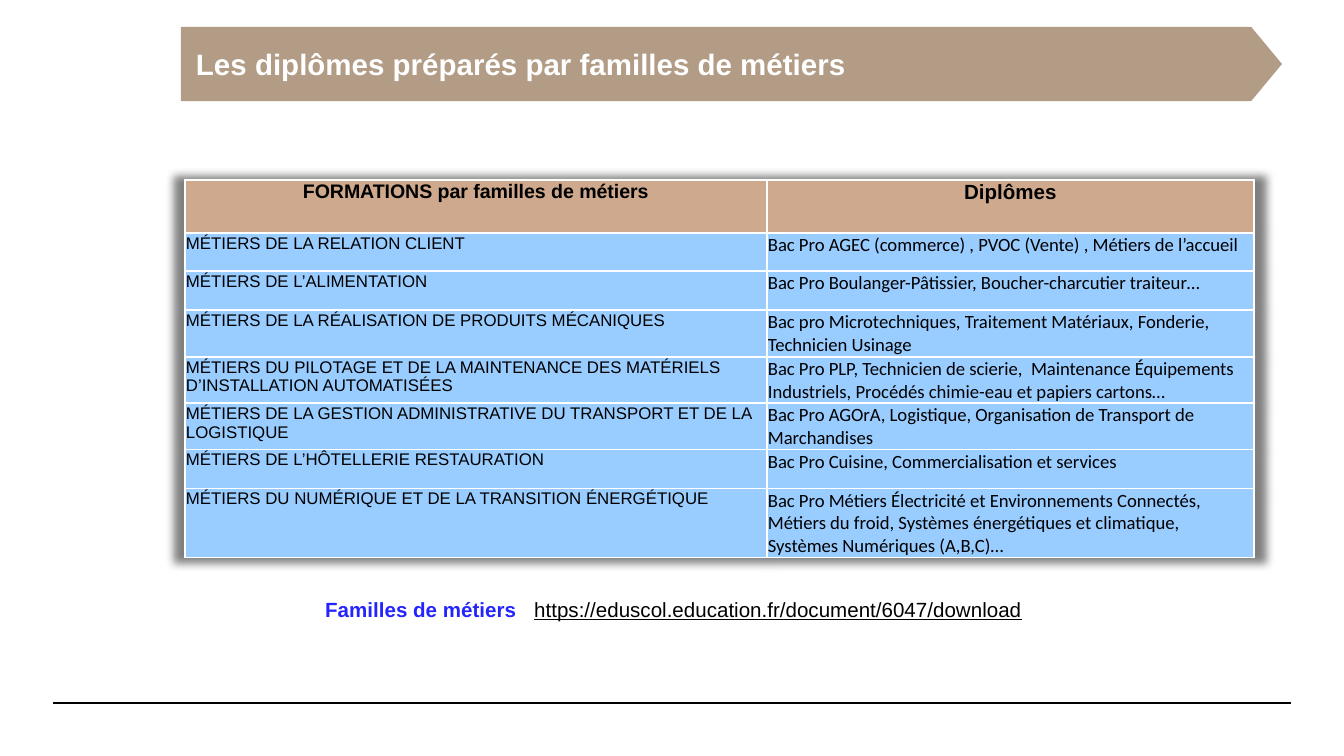
from dataclasses import dataclass
from typing import Any

import lxml.etree
import pptx
import pptx.dml.color
import pptx.enum.shapes
import pptx.enum.text
import pptx.oxml
import pptx.oxml.ns
import pptx.util

EMU_PER_PX = 914400 / 134.4
NS = pptx.oxml.ns.nsdecls("a")
ALIGN = pptx.enum.text.PP_ALIGN
ANCHOR = pptx.enum.text.MSO_ANCHOR
SHAPE = pptx.enum.shapes.MSO_SHAPE


@dataclass(frozen=True)
class Theme:
    sans: str = "Arial"
    body: str = "Calibri"
    black: str = "000000"
    white: str = "FFFFFF"
    banner: str = "B29C85"
    header: str = "CFA98D"
    row: str = "99CCFF"
    accent: str = "2424FF"
    title_pt: float = 15.8
    header_pt: float = 10.5
    header_right_pt: float = 11
    family_pt: float = 9
    diploma_pt: float = 10
    link_pt: float = 11


@dataclass(frozen=True)
class Family:
    name: str
    diplomas: str
    height: int


T = Theme()
HEADER_HEIGHT = 53
COLUMN_WIDTHS = (582, 487)
FAMILIES = [
    Family("MÉTIERS DE LA RELATION CLIENT",
           "Bac Pro AGEC (commerce) , PVOC (Vente) , Métiers de l’accueil", 38),
    Family("MÉTIERS DE L’ALIMENTATION",
           "Bac Pro Boulanger-Pâtissier, Boucher-charcutier traiteur…", 39),
    Family("MÉTIERS DE LA RÉALISATION DE PRODUITS MÉCANIQUES",
           "Bac pro Microtechniques, Traitement Matériaux, Fonderie, Technicien Usinage", 47),
    Family("MÉTIERS DU PILOTAGE ET DE LA MAINTENANCE DES MATÉRIELS "
           "D’INSTALLATION AUTOMATISÉES",
           "Bac Pro PLP, Technicien de scierie,  Maintenance Équipements Industriels, "
           "Procédés chimie-eau et papiers cartons…", 46),
    Family("MÉTIERS DE LA GESTION ADMINISTRATIVE DU TRANSPORT ET DE LA LOGISTIQUE",
           "Bac Pro AGOrA, Logistique, Organisation de Transport de Marchandises", 46),
    Family("MÉTIERS DE L’HÔTELLERIE RESTAURATION",
           "Bac Pro Cuisine, Commercialisation et services", 39),
    Family("MÉTIERS DU NUMÉRIQUE ET DE LA TRANSITION ÉNERGÉTIQUE",
           "Bac Pro Métiers Électricité et Environnements Connectés, Métiers du froid, "
           "Systèmes énergétiques et climatique, Systèmes Numériques (A,B,C)…", 69),
]


def px(n: int) -> int:
    return round(n * EMU_PER_PX)


def rgb(color: str) -> pptx.dml.color.RGBColor:
    return pptx.dml.color.RGBColor.from_string(color)


def apply(obj: Any, values: dict[str, Any]) -> None:
    for name, value in values.items():
        setattr(obj, name, value)


def add_run(p: Any, text: str, color: str, **font: Any) -> None:
    r = p.add_run()
    r.text = text
    apply(r.font, font)
    r.font.color.rgb = rgb(color)


def add_title(slide: Any) -> None:
    box = [px(n) for n in (181, 27, 1101, 74)]
    banner = slide.shapes.add_shape(SHAPE.PENTAGON, *box)
    banner.adjustments[0] = 0.415
    banner.shadow.inherit = False
    banner.fill.solid()
    banner.fill.fore_color.rgb = rgb(T.banner)
    banner.line.fill.background()
    title = slide.shapes.title
    title.element.addprevious(banner.element)
    apply(title, dict(zip(("left", "top", "width", "height"), box)))
    tf = title.text_frame
    apply(tf, {"margin_left": px(15), "margin_right": px(15), "margin_top": px(7),
               "margin_bottom": px(7), "word_wrap": True,
               "vertical_anchor": ANCHOR.MIDDLE,
               "auto_size": pptx.enum.text.MSO_AUTO_SIZE.NONE})
    p = tf.paragraphs[0]
    p.alignment = ALIGN.JUSTIFY
    add_run(p, "Les diplômes préparés par familles de métiers", T.white,
            name=T.sans, size=pptx.util.Pt(T.title_pt), bold=True)


def fill_cell(cell: Any, text: str, fill: str, font: str, size: float,
              header: bool = False) -> None:
    apply(cell, {"margin_left": px(1), "margin_right": px(1), "margin_top": px(1),
                 "margin_bottom": 0, "vertical_anchor": ANCHOR.TOP})
    tc_pr = cell._tc.get_or_add_tcPr()
    for side in "LRTB":
        tc_pr.append(pptx.oxml.parse_xml(
            f'<a:ln{side} {NS} w="12700"><a:solidFill><a:srgbClr val="{T.white}"/>'
            f'</a:solidFill></a:ln{side}>'))
    cell.fill.solid()
    cell.fill.fore_color.rgb = rgb(fill)
    p = cell.text_frame.paragraphs[0]
    p.alignment = ALIGN.CENTER if header else ALIGN.LEFT
    add_run(p, text, T.black, name=font, size=pptx.util.Pt(size), bold=header)


def add_families_table(slide: Any) -> None:
    heights = [HEADER_HEIGHT] + [f.height for f in FAMILIES]
    frame = slide.shapes.add_table(len(heights), len(COLUMN_WIDTHS), px(185), px(180),
                                   px(sum(COLUMN_WIDTHS)), px(sum(heights)))
    table = frame.table
    table.horz_banding = False
    for column, width in zip(table.columns, COLUMN_WIDTHS):
        column.width = px(width)
    for row, height in zip(table.rows, heights):
        row.height = px(height)
    table._tbl.tblPr.insert(0, pptx.oxml.parse_xml(
        f'<a:effectLst {NS}><a:outerShdw blurRad="63500" sx="102000" sy="102000" '
        f'algn="ctr" rotWithShape="0"><a:srgbClr val="{T.black}">'
        f'<a:alpha val="50000"/></a:srgbClr></a:outerShdw></a:effectLst>'))
    fill_cell(table.cell(0, 0), "FORMATIONS par familles de métiers", T.header,
              T.sans, T.header_pt, header=True)
    fill_cell(table.cell(0, 1), "Diplômes", T.header, T.sans, T.header_right_pt,
              header=True)
    for i, family in enumerate(FAMILIES, 1):
        fill_cell(table.cell(i, 0), family.name, T.row, T.sans, T.family_pt)
        fill_cell(table.cell(i, 1), family.diplomas, T.row, T.body, T.diploma_pt)


def add_source(slide: Any) -> None:
    tf = slide.shapes.add_textbox(px(312), px(590), px(942), px(39)).text_frame
    tf.word_wrap = True
    p = tf.paragraphs[0]
    tabs = lxml.etree.SubElement(p._p.get_or_add_pPr(), pptx.oxml.ns.qn("a:tabLst"))
    lxml.etree.SubElement(tabs, pptx.oxml.ns.qn("a:tab"), pos=str(px(209)), algn="l")
    font = {"name": T.sans, "size": pptx.util.Pt(T.link_pt)}
    add_run(p, "Familles de métiers\t", T.accent, bold=True, **font)
    add_run(p, "https://eduscol.education.fr/document/6047/download", T.black,
            bold=False, underline=True, **font)


def add_footer_line(slide: Any) -> None:
    line = slide.shapes.add_connector(pptx.enum.shapes.MSO_CONNECTOR.STRAIGHT,
                                      px(53), px(703), px(1291), px(703))
    line.line.color.rgb = rgb(T.black)
    line.line.width = pptx.util.Pt(0.8)
    lxml.etree.SubElement(line.element.spPr, pptx.oxml.ns.qn("a:effectLst"))


def main() -> None:
    prs = pptx.Presentation()
    apply(prs, {"slide_width": px(1344), "slide_height": px(756)})
    slide = prs.slides.add_slide(prs.slide_layouts[5])
    add_footer_line(slide)
    add_families_table(slide)
    add_title(slide)
    add_source(slide)
    prs.save("out.pptx")


if __name__ == "__main__":
    main()
